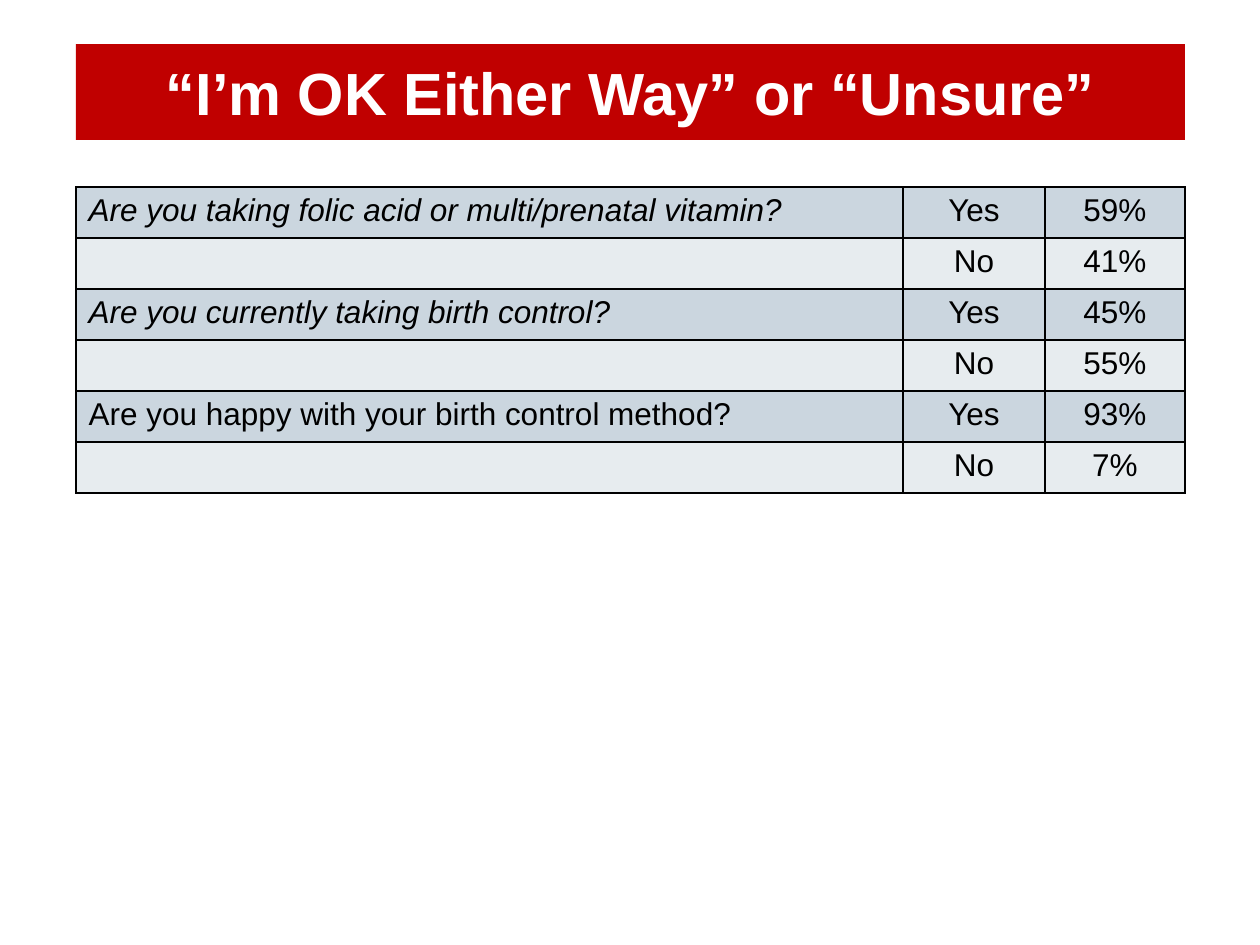
from lxml.etree import SubElement
from pptx import Presentation
from pptx.dml.color import RGBColor
from pptx.enum.shapes import MSO_SHAPE
from pptx.enum.text import MSO_ANCHOR, PP_ALIGN
from pptx.oxml.ns import qn
from pptx.util import Emu, Pt

EMU_PER_PX = 914400 / 126
LEFT, WIDTH = 76, 1109
COLUMN_WIDTHS = [827, 142, 140]
ROW_HEIGHT = 51
ROW_FILLS = ["CBD6DF", "E7ECEF"]

# Question, whether it is italic, share of yes and of no
SURVEY = [
    ("Are you taking folic acid or multi/prenatal vitamin?", True, "59%", "41%"),
    ("Are you currently taking birth control?", True, "45%", "55%"),
    ("Are you happy with your birth control method?", False, "93%", "7%"),
]


def px(length):
    return Emu(round(length * EMU_PER_PX))


def color(value):
    return RGBColor.from_string(value)


def write(frame, text, size, ink, align, bold=False, italic=False):
    paragraph = frame.paragraphs[0]
    paragraph.text = text
    paragraph.alignment = align
    font = paragraph.font
    font.name, font.size = "Arial", Pt(size)
    font.bold, font.italic = bold, italic
    font.color.rgb = color(ink)


def add_title(slide, text):
    banner = slide.shapes.add_shape(
        MSO_SHAPE.RECTANGLE, px(LEFT), px(44), px(WIDTH), px(96))
    banner.shadow.inherit = False
    banner.fill.solid()
    banner.fill.fore_color.rgb = color("C00000")
    banner.line.fill.background()
    banner.text_frame.word_wrap = True
    banner.text_frame.vertical_anchor = MSO_ANCHOR.MIDDLE
    write(banner.text_frame, text, 34, "FFFFFF", PP_ALIGN.CENTER, bold=True)


def add_borders(cell, ink="000000", width=1):
    properties = cell._tc.get_or_add_tcPr()
    for side in ("a:lnL", "a:lnR", "a:lnT", "a:lnB"):
        line = SubElement(properties, qn(side), w=str(Pt(width)))
        fill = SubElement(line, qn("a:solidFill"))
        SubElement(fill, qn("a:srgbClr"), val=ink)


def style_cell(cell, fill):
    # Borders come before the fill in the cell properties
    add_borders(cell)
    cell.fill.solid()
    cell.fill.fore_color.rgb = color(fill)


def add_survey_table(slide, survey):
    rows = []
    for question, italic, yes, no in survey:
        rows += [(question, italic, "Yes", yes), ("", False, "No", no)]

    table = slide.shapes.add_table(
        len(rows), len(COLUMN_WIDTHS), px(LEFT), px(187),
        px(WIDTH), px(ROW_HEIGHT * len(rows))).table
    table.first_row = table.horz_banding = False
    for column, width in zip(table.columns, COLUMN_WIDTHS):
        column.width = px(width)

    for index, (question, italic, answer, share) in enumerate(rows):
        table.rows[index].height = px(ROW_HEIGHT)
        cells = table.rows[index].cells
        for cell, text in zip(cells, (question, answer, share)):
            is_question = text == question
            style_cell(cell, ROW_FILLS[index % 2])
            write(cell.text_frame, text, 18, "000000",
                  PP_ALIGN.LEFT if is_question else PP_ALIGN.CENTER,
                  italic=is_question and italic)


def main():
    presentation = Presentation()
    presentation.slide_width, presentation.slide_height = px(1260), px(945)
    slide = presentation.slides.add_slide(presentation.slide_layouts[6])
    add_title(slide, "“I’m OK Either Way” or “Unsure”")
    add_survey_table(slide, SURVEY)
    presentation.save("out.pptx")


if __name__ == "__main__":
    main()
